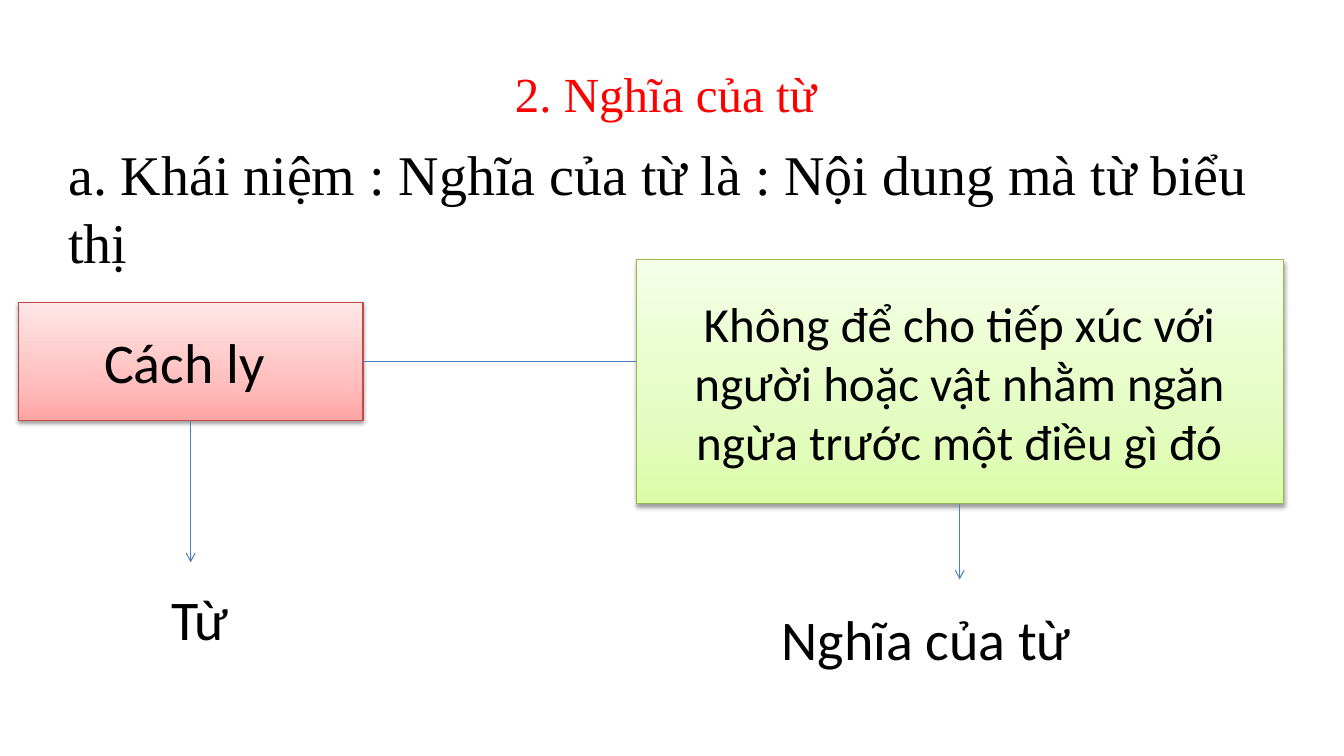
from copy import deepcopy

from lxml.etree import SubElement
from pptx import Presentation
from pptx.dml.color import RGBColor
from pptx.enum.shapes import MSO_CONNECTOR as Connector, MSO_SHAPE as Shape
from pptx.enum.text import MSO_ANCHOR as Anchor, MSO_AUTO_SIZE as AutoSize, PP_ALIGN as Align
from pptx.oxml import parse_xml
from pptx.oxml.ns import qn
from pptx.util import Cm, Pt

SHADOW = (
    '<a:effectLst xmlns:a="http://schemas.openxmlformats.org/drawingml/2006/main">'
    '<a:outerShdw blurRad="40000" dist="20000" dir="5400000" rotWithShape="0">'
    '<a:srgbClr val="000000"><a:alpha val="38000"/></a:srgbClr>'
    '</a:outerShdw></a:effectLst>'
)


def color(value):
    return RGBColor.from_string(value)


def write(shape, text, size, font="Calibri", ink="000000", align=Align.CENTER, anchor=Anchor.MIDDLE):
    frame = shape.text_frame
    frame.word_wrap = True
    frame.auto_size = AutoSize.NONE
    frame.vertical_anchor = anchor
    paragraph = frame.paragraphs[0]
    paragraph.alignment = align
    run = paragraph.add_run()
    run.text = text
    for name, value in {"name": font, "size": Pt(size)}.items():
        setattr(run.font, name, value)
    run.font.color.rgb = color(ink)


presentation = Presentation()
presentation.slide_width = Cm(33.87)
presentation.slide_height = Cm(19.05)
slide = presentation.slides.add_slide(presentation.slide_layouts[5])

title = slide.shapes.title
title_place = {"left": 1.69, "top": 0.76, "width": 30.48, "height": 3.18}
for name, value in title_place.items():
    setattr(title, name, Cm(value))
write(title, "2. Nghĩa của từ ", 35, "Times New Roman", "FF0000")

# Definition and the two captions
definition = "a. Khái niệm : Nghĩa của từ là : Nội dung mà từ biểu thị"
texts = [
    (definition, (1.47, 3.4, 30.91, 3.68), "Times New Roman", Align.LEFT),
    ("Từ ", (0.46, 14.6, 9.47, 1.96), "Calibri", Align.CENTER),
    ("Nghĩa của từ ", (18.42, 15.11, 10.16, 1.96), "Calibri", Align.CENTER),
]
for text, place, font, align in texts:
    text_box = slide.shapes.add_textbox(*map(Cm, place))
    write(text_box, text, 40, font, align=align, anchor=Anchor.TOP)

# Word and meaning boxes, each with an arrow down to its caption
meaning = "Không để cho tiếp xúc với người hoặc vật nhằm ngăn ngừa trước một điều gì đó"
boxes = [
    ("Cách ly ", 40, (0.46, 7.62, 8.69, 2.97), ("FFA6A5", "FFC0BF", "FFE7E7"), "BF4C48", 14.17),
    (meaning, 35, (16.03, 6.55, 16.31, 6.15), ("DAFDA7", "E4FCC2", "F5FFE7"), "98B955", 14.6),
]
links = []
for text, size, place, shades, outline, arrow_end in boxes:
    box = slide.shapes.add_shape(Shape.RECTANGLE, *map(Cm, place))
    box.fill.gradient()
    box.fill.gradient_angle = 90
    stop_list = box._element.spPr.find(".//" + qn("a:gsLst"))
    stop_list.insert(1, deepcopy(stop_list[0]))
    for stop, position, shade in zip(box.fill.gradient_stops, (0, 0.35, 1), shades):
        stop.position = position
        stop.color.rgb = color(shade)
    box.line.color.rgb = color(outline)
    box.line.width = Pt(0.75)
    box._element.spPr.append(parse_xml(SHADOW))
    write(box, text, size)

    center = box.left + box.width // 2
    arrow = slide.shapes.add_connector(
        Connector.STRAIGHT, center, box.top + box.height, center, Cm(arrow_end))
    arrow.begin_connect(box, 2)
    links.append((arrow, True))
    if text != meaning:
        middle = box.top + box.height // 2
        bridge = slide.shapes.add_connector(
            Connector.STRAIGHT, box.left + box.width, middle, Cm(16.03), middle)
        bridge.begin_connect(box, 3)
        links.append((bridge, False))

for link, has_arrowhead in links:
    link.line.color.rgb = color("4B7EBC")
    link.line.width = Pt(0.75)
    if has_arrowhead:
        SubElement(link.line._get_or_add_ln(), qn("a:tailEnd"), type="arrow")
    SubElement(link._element.spPr, qn("a:effectLst"))

presentation.save("out.pptx")
